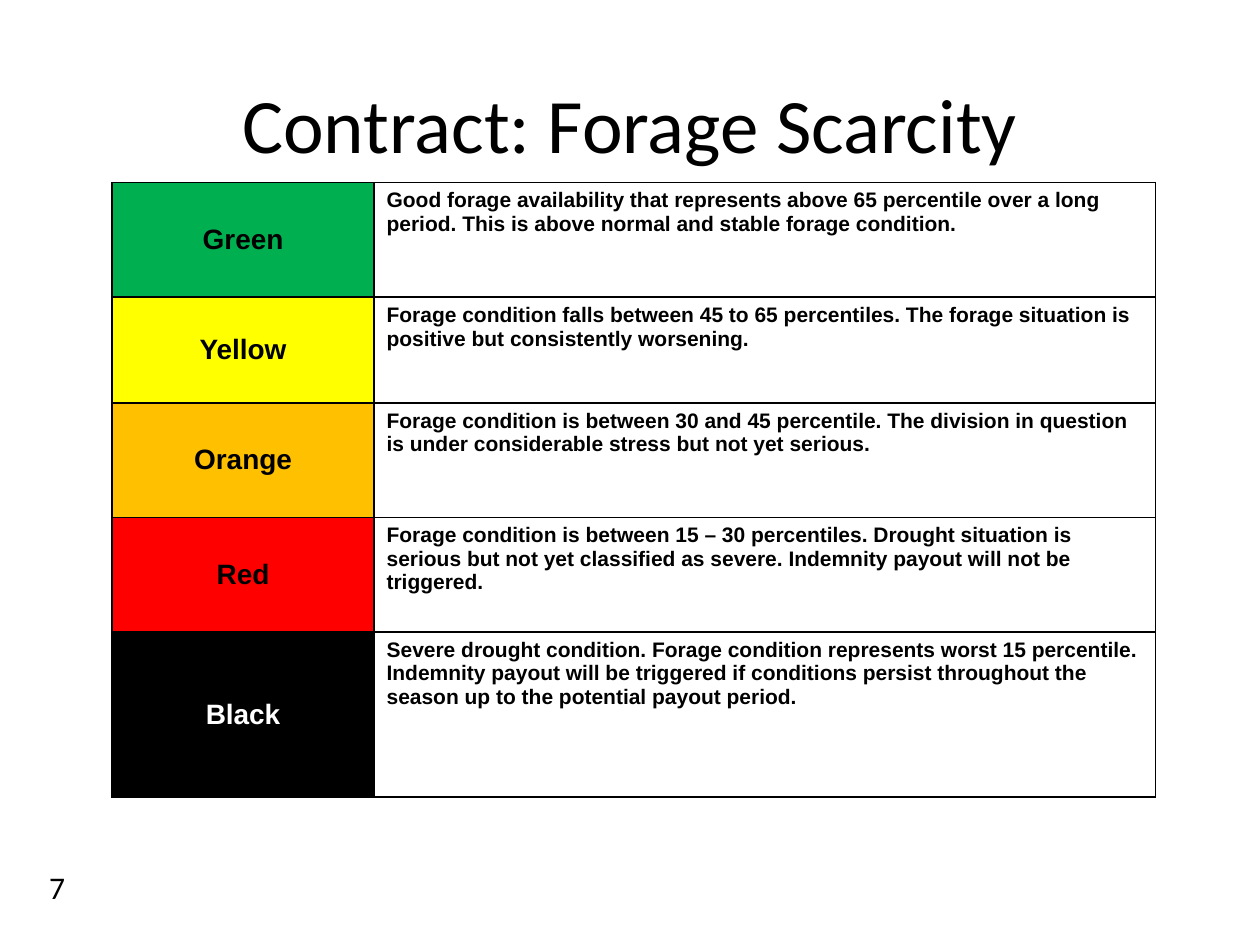
from dataclasses import dataclass

import pptx
import pptx.dml.color
import pptx.enum.text
import pptx.oxml
import pptx.oxml.ns
import pptx.util
from pptx.util import Cm


@dataclass(frozen=True)
class Theme:
    """Colours, fonts and type sizes of the slide."""
    ink: str = "000000"
    paper: str = "FFFFFF"
    heading_font: str = "Calibri"
    body_font: str = "Arial"
    title_size: int = 44
    number_size: int = 18
    stage_size: int = 16
    condition_size: int = 12
    border_width: int = 1


THEME = Theme()
ANCHOR = pptx.enum.text.MSO_ANCHOR
ALIGN = pptx.enum.text.PP_ALIGN

STAGES = [
    ("Green", "00B050", THEME.ink, 2.31,
     "Good forage availability that represents above 65 percentile over a long period. "
     "This is above normal and stable forage condition."),
    ("Yellow", "FFFF00", THEME.ink, 2.13,
     "Forage condition falls between 45 to 65 percentiles. "
     "The forage situation is positive but consistently worsening."),
    ("Orange", "FFC000", THEME.ink, 2.31,
     "Forage condition is between 30 and 45 percentile. "
     "The division in question is under considerable stress but not yet serious."),
    ("Red", "FF0000", THEME.ink, 2.31,
     "Forage condition is between 15 – 30 percentiles. Drought situation is serious "
     "but not yet classified as severe. Indemnity payout will not be triggered."),
    ("Black", "000000", THEME.paper, 3.33,
     "Severe drought condition. Forage condition represents worst 15 percentile. "
     "Indemnity payout will be triggered if conditions persist throughout the season "
     "up to the potential payout period."),
]


def apply(target, values):
    """Set each named attribute of the target."""
    for name, value in values.items():
        setattr(target, name, value)


def write(frame, text, font, size, color, bold=False, align=ALIGN.LEFT, spacing=1.0):
    """Put one formatted paragraph into a text frame."""
    paragraph = frame.paragraphs[0]
    apply(paragraph, {"alignment": align, "line_spacing": spacing})
    run = paragraph.add_run()
    run.text = text
    apply(run.font, {"name": font, "size": pptx.util.Pt(size), "bold": bold})
    run.font.color.rgb = pptx.dml.color.RGBColor.from_string(color)


def add_borders(cell):
    """Draw a thin line on all four sides of a cell."""
    properties = cell._tc.get_or_add_tcPr()
    width = pptx.util.Pt(THEME.border_width)
    for side in ("lnL", "lnR", "lnT", "lnB"):
        properties.append(pptx.oxml.parse_xml(
            f'<a:{side} {pptx.oxml.ns.nsdecls("a")} w="{width}"><a:solidFill>'
            f'<a:srgbClr val="{THEME.ink}"/></a:solidFill></a:{side}>'))


def place_title(slide, left, top, width, height):
    """Move and format the title placeholder."""
    title = slide.shapes.title
    apply(title, {"left": left, "top": top, "width": width, "height": height})
    apply(title.text_frame, {
        "margin_left": 0, "margin_right": 0, "margin_top": 0, "margin_bottom": 0,
        "vertical_anchor": ANCHOR.MIDDLE, "word_wrap": True,
        "auto_size": pptx.enum.text.MSO_AUTO_SIZE.NONE})
    write(title.text_frame, "Contract: Forage Scarcity", THEME.heading_font,
          THEME.title_size, THEME.ink, align=ALIGN.CENTER, spacing=0.9)


def place_stages(slide, left, top, width):
    """Build the table of forage stages and their conditions."""
    height = Cm(sum(stage[3] for stage in STAGES))
    table = slide.shapes.add_table(len(STAGES), 2, left, top, width, height).table
    apply(table, {"first_row": False, "horz_banding": False})
    stage_width = Cm(5.28)
    table.columns[0].width = stage_width
    table.columns[1].width = width - stage_width
    for row, (stage, color, ink, row_height, condition) in zip(table.rows, STAGES):
        row.height = Cm(row_height)
        stage_cell, condition_cell = row.cells
        for cell in row.cells:
            add_borders(cell)
        stage_cell.vertical_anchor = ANCHOR.MIDDLE
        stage_cell.fill.solid()
        stage_cell.fill.fore_color.rgb = pptx.dml.color.RGBColor.from_string(color)
        condition_cell.fill.background()
        write(stage_cell.text_frame, stage, THEME.body_font, THEME.stage_size,
              ink, bold=True, align=ALIGN.CENTER)
        write(condition_cell.text_frame, condition, THEME.body_font,
              THEME.condition_size, THEME.ink, bold=True)


def place_number(slide, left, top, width, height):
    """Add the page number."""
    number = slide.shapes.add_textbox(left, top, width, height)
    number.text_frame.word_wrap = True
    write(number.text_frame, "7", THEME.heading_font, THEME.number_size, THEME.ink)


def main():
    """Build and save the slide."""
    deck = pptx.Presentation()
    apply(deck, {"slide_width": Cm(25.4), "slide_height": Cm(19.05)})
    slide = deck.slides.add_slide(deck.slide_layouts.get_by_name("Title Only"))
    place_number(slide, Cm(0.74), Cm(17.37), Cm(1.07), Cm(1.8))
    place_title(slide, Cm(1.27), Cm(0.76), Cm(22.86), Cm(3.68))
    place_stages(slide, Cm(2.26), Cm(3.68), Cm(21.03))
    deck.save("out.pptx")


if __name__ == "__main__":
    main()
